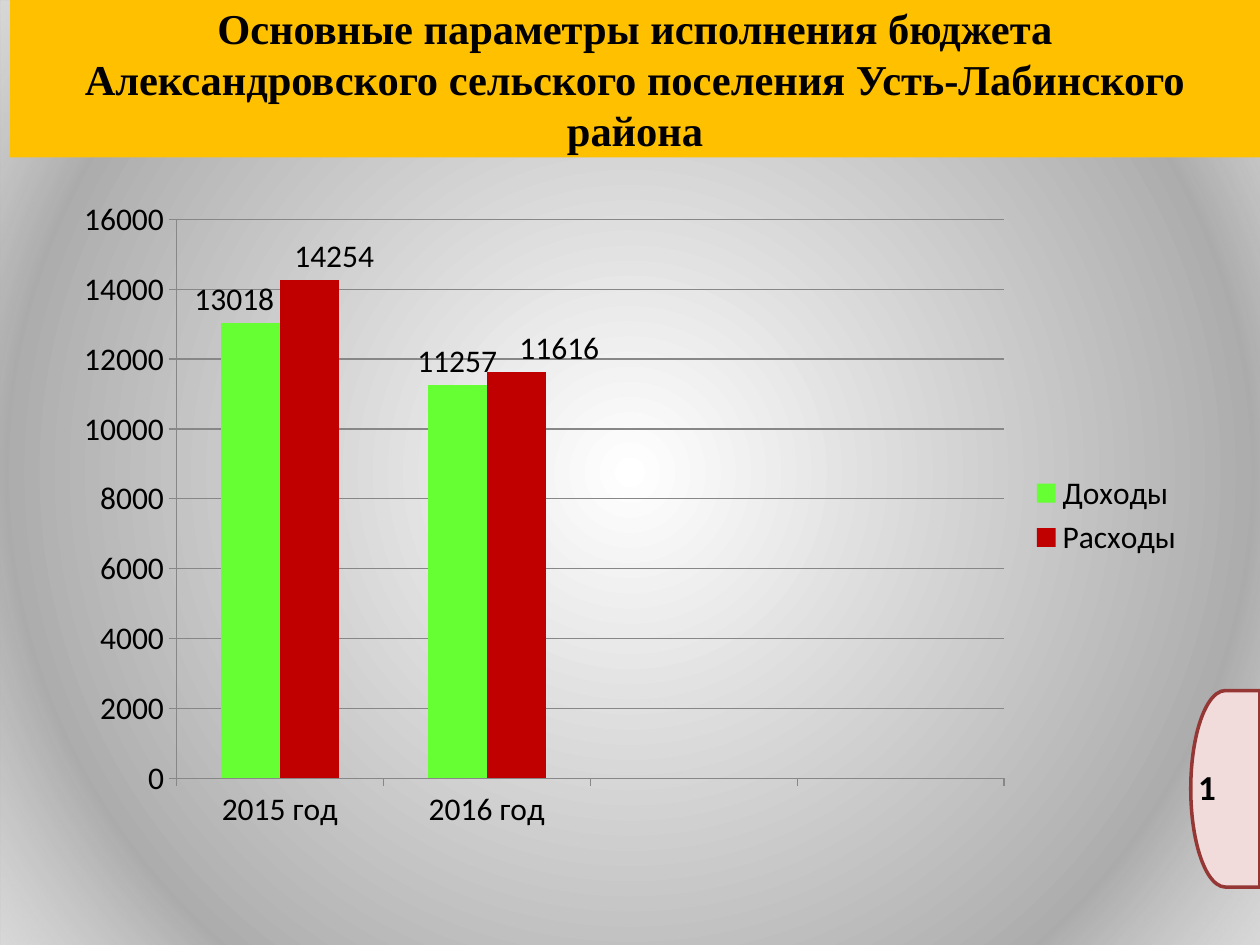
from lxml import etree
from pptx import Presentation
from pptx.chart.data import CategoryChartData
from pptx.dml.color import RGBColor
from pptx.enum.chart import XL_CHART_TYPE, XL_LABEL_POSITION, XL_LEGEND_POSITION, XL_TICK_MARK
from pptx.enum.shapes import MSO_SHAPE
from pptx.enum.text import MSO_ANCHOR, MSO_AUTO_SIZE, PP_ALIGN
from pptx.oxml import parse_xml
from pptx.oxml.ns import nsdecls, qn
from pptx.util import Inches, Pt

BLACK = RGBColor(0x00, 0x00, 0x00)
WHITE = RGBColor(0xFF, 0xFF, 0xFF)
GREY = RGBColor(0x97, 0x97, 0x97)
EDGE_GREY = RGBColor(0xD9, 0xD9, 0xD9)
AXIS_GREY = RGBColor(0x87, 0x87, 0x87)
AMBER = RGBColor(0xFF, 0xC0, 0x00)
INCOME_GREEN = RGBColor(0x66, 0xFF, 0x33)
EXPENSE_RED = RGBColor(0xC0, 0x00, 0x00)
BADGE_PINK = RGBColor(0xF2, 0xDC, 0xDB)
BADGE_RED = RGBColor(0x95, 0x37, 0x35)

TITLE_FONT = {"name": "Times New Roman", "size": Pt(24.3), "bold": True}
CHART_FONT = {"name": "Calibri", "size": Pt(18)}
BADGE_FONT = {"name": "Calibri", "size": Pt(20), "bold": True}

YEARS = ["2015 год", "2016 год", "", ""]
# name, colour, values, sideways label shifts as shares of the chart width
SERIES = [
    ("Доходы", INCOME_GREEN, [13018, 11257, None, None], {0: -0.014}),
    ("Расходы", EXPENSE_RED, [14254, 11616, None, None], {0: 0.022, 1: 0.038}),
]
PLOT_LAYOUT = {"x": 0.1, "y": 0.05, "w": 0.73, "h": 0.85}


def set_font(font, values):
    for key, value in values.items():
        setattr(font, key, value)
    font.color.rgb = BLACK


def set_radial_gradient(fill, stops):
    """Spread (position %, colour, opacity %) stops from the centre outwards."""
    fill.gradient()
    grad = fill._xPr.find(qn("a:gradFill"))
    for child in list(grad):
        grad.remove(child)
    stop_list = etree.SubElement(grad, qn("a:gsLst"))
    for position, colour, opacity in stops:
        stop = etree.SubElement(stop_list, qn("a:gs"), pos=str(position * 1000))
        shade = etree.SubElement(stop, qn("a:srgbClr"), val=str(colour))
        if opacity < 100:
            etree.SubElement(shade, qn("a:alpha"), val=str(opacity * 1000))
    path = etree.SubElement(grad, qn("a:path"), path="circle")
    etree.SubElement(path, qn("a:fillToRect"), l="50000", t="50000", r="50000", b="50000")


def add_backdrop(slide, left, top, width, height):
    set_radial_gradient(slide.background.fill, [(0, WHITE, 100), (100, GREY, 100)])
    vignette = slide.shapes.add_shape(MSO_SHAPE.RECTANGLE, left, top, width, height)
    vignette.shadow.inherit = False
    vignette.line.fill.background()
    set_radial_gradient(vignette.fill, [(79, WHITE, 0), (100, EDGE_GREY, 100)])
    slide.shapes._spTree.insert(2, vignette._element)


def fill_title(title, left, top, width, height):
    title.left, title.top, title.width, title.height = left, top, width, height
    title.fill.solid()
    title.fill.fore_color.rgb = AMBER
    frame = title.text_frame
    frame.text = ("Основные параметры исполнения бюджета\v"
                  "Александровского сельского поселения Усть-Лабинского района")
    frame.word_wrap = True
    frame.auto_size = MSO_AUTO_SIZE.NONE
    frame.vertical_anchor = MSO_ANCHOR.MIDDLE
    heading = frame.paragraphs[0]
    heading.alignment = PP_ALIGN.CENTER
    for run in heading.runs:
        set_font(run.font, TITLE_FONT)


def manual_layout(values, inner=False):
    layout = parse_xml(f"<c:layout {nsdecls('c')}><c:manualLayout/></c:layout>")
    settings = {}
    if inner:
        settings = {"layoutTarget": "inner", "xMode": "edge", "yMode": "edge"}
    for tag, value in {**settings, **values}.items():
        etree.SubElement(layout[0], qn(f"c:{tag}"), val=str(value))
    return layout


def format_axis(axis):
    axis.major_tick_mark = XL_TICK_MARK.OUTSIDE
    axis.minor_tick_mark = XL_TICK_MARK.NONE
    axis.format.line.color.rgb = AXIS_GREY
    set_font(axis.tick_labels.font, CHART_FONT)


def format_series(series, colour, label_shifts):
    series.format.fill.solid()
    series.format.fill.fore_color.rgb = colour
    labels = series.data_labels
    labels.show_value = True
    labels.position = XL_LABEL_POSITION.OUTSIDE_END
    set_font(labels.font, CHART_FONT)
    for index, shift in label_shifts.items():
        label = series.points[index].data_label
        set_font(label.font, CHART_FONT)
        label.position = XL_LABEL_POSITION.OUTSIDE_END
        label._dLbl.insert(1, manual_layout({"x": shift, "y": 0}))


def add_budget_chart(slide, left, top, width, height):
    data = CategoryChartData(number_format="General")
    data.categories = YEARS
    for name, _, values, _ in SERIES:
        data.add_series(name, values)
    chart = slide.shapes.add_chart(
        XL_CHART_TYPE.COLUMN_CLUSTERED, left, top, width, height, data).chart
    chart.has_title = False
    set_font(chart.font, CHART_FONT)
    chart.has_legend = True
    chart.legend.position = XL_LEGEND_POSITION.RIGHT
    chart.legend.include_in_layout = False

    format_axis(chart.category_axis)
    format_axis(chart.value_axis)
    chart.value_axis.minimum_scale = 0
    chart.value_axis.maximum_scale = 16000
    chart.value_axis.major_unit = 2000
    chart.value_axis.major_gridlines.format.line.color.rgb = AXIS_GREY

    plot = chart.plots[0]
    plot.gap_width, plot.overlap, plot.vary_by_categories = 150, 0, False
    for series, (_, colour, _, label_shifts) in zip(plot.series, SERIES):
        format_series(series, colour, label_shifts)

    plot_area = chart._chartSpace.chart.plotArea
    for layout in plot_area.findall(qn("c:layout")):
        plot_area.remove(layout)
    plot_area.insert(0, manual_layout(PLOT_LAYOUT, inner=True))


def add_page_badge(slide, left, top, width, height):
    badge = slide.shapes.add_group_shape()
    tab = badge.shapes.add_shape(MSO_SHAPE.FLOWCHART_DELAY, left, top, width, height)
    tab.rotation = 180
    tab.shadow.inherit = False
    tab.fill.solid()
    tab.fill.fore_color.rgb = BADGE_PINK
    tab.line.color.rgb = BADGE_RED
    tab.line.width = Pt(2)

    number = badge.shapes.add_textbox(
        left - Inches(0.04), top + Inches(0.55), Inches(0.58), Inches(0.44))
    frame = number.text_frame
    frame.word_wrap = True
    frame.auto_size = MSO_AUTO_SIZE.SHAPE_TO_FIT_TEXT
    frame.text = "1"
    set_font(frame.paragraphs[0].runs[0].font, BADGE_FONT)


def main():
    deck = Presentation()
    deck.slide_width, deck.slide_height = Inches(10), Inches(7.5)
    slide = deck.slides.add_slide(deck.slide_layouts[5])
    add_backdrop(slide, 0, 0, deck.slide_width, deck.slide_height)
    fill_title(slide.shapes.title, Inches(0.08), 0, Inches(9.92), Inches(1.25))
    add_budget_chart(slide, Inches(0.5), Inches(1.48), Inches(9), Inches(5.22))
    add_page_badge(slide, Inches(9.45), Inches(5.48), Inches(0.55), Inches(1.56))
    deck.save("out.pptx")


if __name__ == "__main__":
    main()
